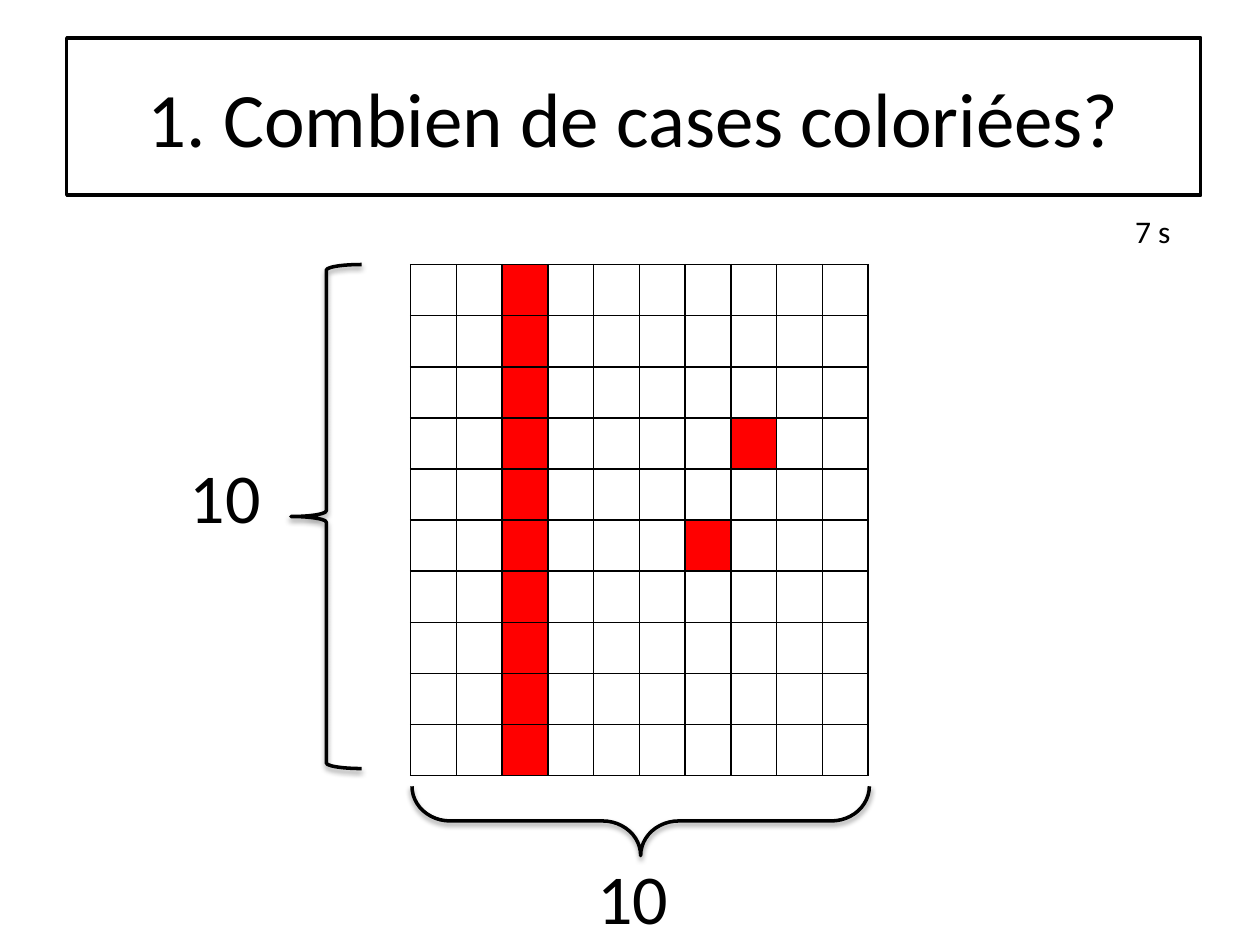
from lxml import etree
from pptx import Presentation
from pptx.dml.color import RGBColor
from pptx.enum.shapes import MSO_SHAPE
from pptx.enum.text import MSO_ANCHOR, MSO_AUTO_SIZE, PP_ALIGN
from pptx.oxml import parse_xml
from pptx.oxml.ns import nsdecls
from pptx.util import Inches, Pt

RECTANGLE = MSO_SHAPE.RECTANGLE
LEFT_BRACE = MSO_SHAPE.LEFT_BRACE
MIDDLE = MSO_ANCHOR.MIDDLE
FIT_SHAPE = MSO_AUTO_SIZE.SHAPE_TO_FIT_TEXT
LEFT = PP_ALIGN.LEFT
CENTER = PP_ALIGN.CENTER

COLORS = {"black": "000000", "white": "FFFFFF", "red": "FF0000"}
BLACK = RGBColor.from_string(COLORS["black"])
WHITE = RGBColor.from_string(COLORS["white"])
RED = RGBColor.from_string(COLORS["red"])
GRID_SIZE = 10
COLORED_COLUMN = 2
COLORED_CELLS = {(3, 7), (5, 6)}


def write_text(shape, text, size, align=LEFT):
    paragraph = shape.text_frame.paragraphs[0]
    paragraph.alignment = align
    run = paragraph.add_run()
    run.text = text
    run.font.name = "Calibri"
    run.font.size = Pt(size)
    run.font.color.rgb = BLACK


presentation = Presentation()
presentation.slide_width = Inches(10)
presentation.slide_height = Inches(7.5)
slide = presentation.slides.add_slide(presentation.slide_layouts[6])

title = slide.shapes.add_shape(RECTANGLE, Inches(0.53), Inches(0.3), Inches(9), Inches(1.25))
title.shadow.inherit = False
title.fill.solid()
title.fill.fore_color.rgb = WHITE
title.line.color.rgb = BLACK
title.line.width = Pt(2)
title.text_frame.word_wrap = True
title.text_frame.vertical_anchor = MIDDLE
write_text(title, "1. Combien de cases coloriées?", size=44, align=CENTER)

grid = slide.shapes.add_table(
    GRID_SIZE, GRID_SIZE, Inches(3.26), Inches(2.1), Inches(3.63), Inches(4)
).table
grid.first_row = False
grid.horz_banding = False
for row in range(GRID_SIZE):
    for column in range(GRID_SIZE):
        cell = grid.cell(row, column)
        colored = column == COLORED_COLUMN or (row, column) in COLORED_CELLS
        cell.fill.solid()
        cell.fill.fore_color.rgb = RED if colored else WHITE
        properties = cell._tc.get_or_add_tcPr()
        for position, side in enumerate(("lnL", "lnR", "lnT", "lnB")):
            border = parse_xml(
                f'<a:{side} {nsdecls("a")} w="{Pt(1)}"><a:solidFill>'
                f'<a:srgbClr val="{COLORS["black"]}"/></a:solidFill></a:{side}>'
            )
            properties.insert(position, border)

for left, top, width, height, rotation, curve in (
    (2.31, 2.1, 0.56, 4, 0, 0.08),
    (4.81, 4.7, 0.55, 3.63, 270, 0.55),
):
    brace = slide.shapes.add_shape(
        LEFT_BRACE, Inches(left), Inches(top), Inches(width), Inches(height)
    )
    brace.rotation = rotation
    brace.adjustments[0] = curve
    brace.fill.background()
    brace.line.color.rgb = BLACK
    brace.line.width = Pt(2)
    brace.shadow.inherit = False
    effects = brace._element.spPr.find("{*}effectLst")
    shadow = parse_xml(
        f'<a:outerShdw {nsdecls("a")} blurRad="{Pt(3.1)}" dist="{Pt(1.6)}" '
        'dir="5400000" rotWithShape="0"/>'
    )
    color = etree.SubElement(shadow, "{%s}srgbClr" % shadow.nsmap["a"], val=COLORS["black"])
    etree.SubElement(color, "{%s}alpha" % shadow.nsmap["a"], val="38000")
    effects.append(shadow)

for text, left, top, width, height, size in (
    ("10", 1.41, 3.55, 0.77, 0.77, 40),
    ("10", 4.64, 6.73, 0.77, 0.77, 40),
    ("7 s", 8.91, 1.63, 0.49, 0.4, 18),
):
    label = slide.shapes.add_textbox(Inches(left), Inches(top), Inches(width), Inches(height))
    label.text_frame.word_wrap = False
    label.text_frame.auto_size = FIT_SHAPE
    write_text(label, text, size=size)

presentation.save("out.pptx")
